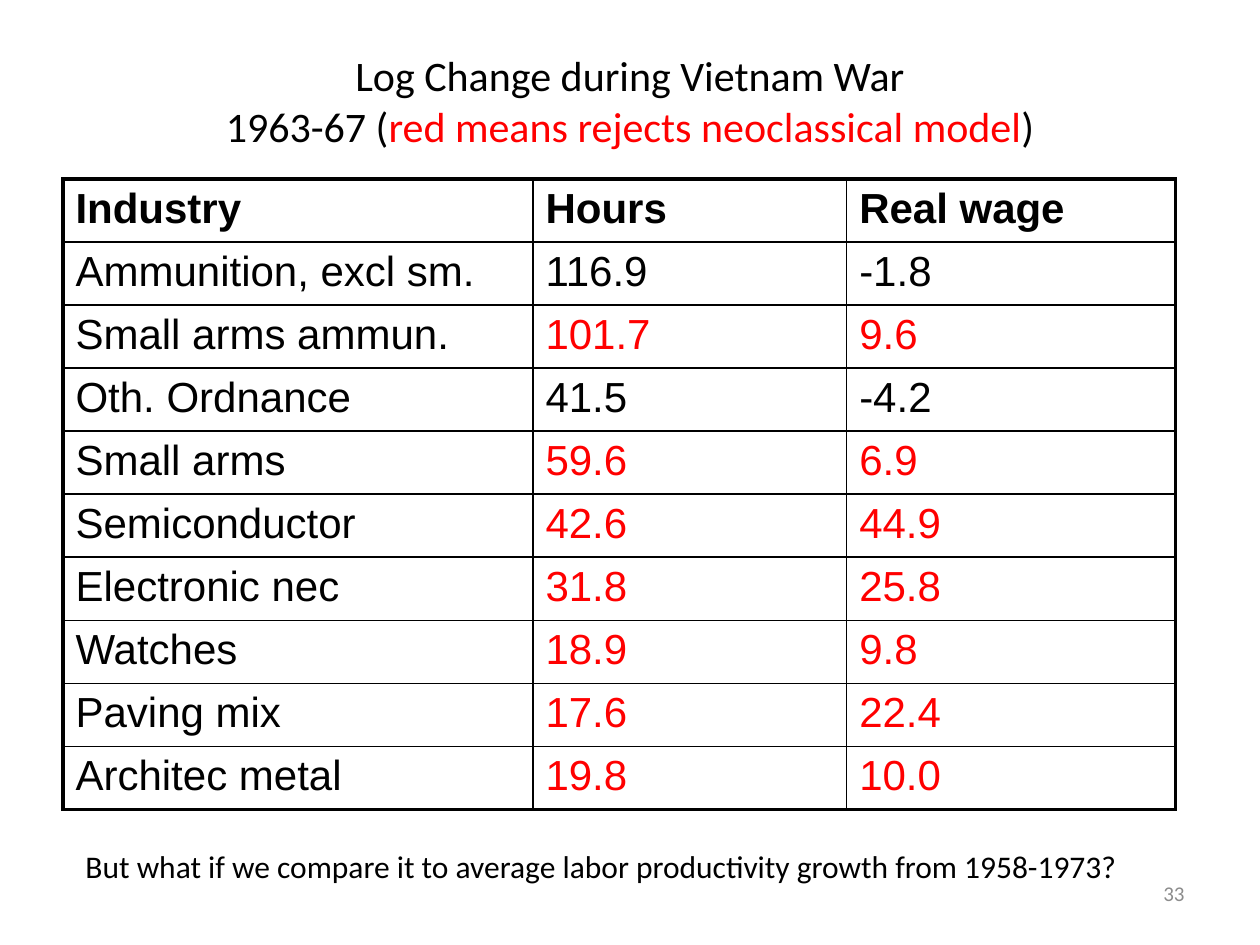
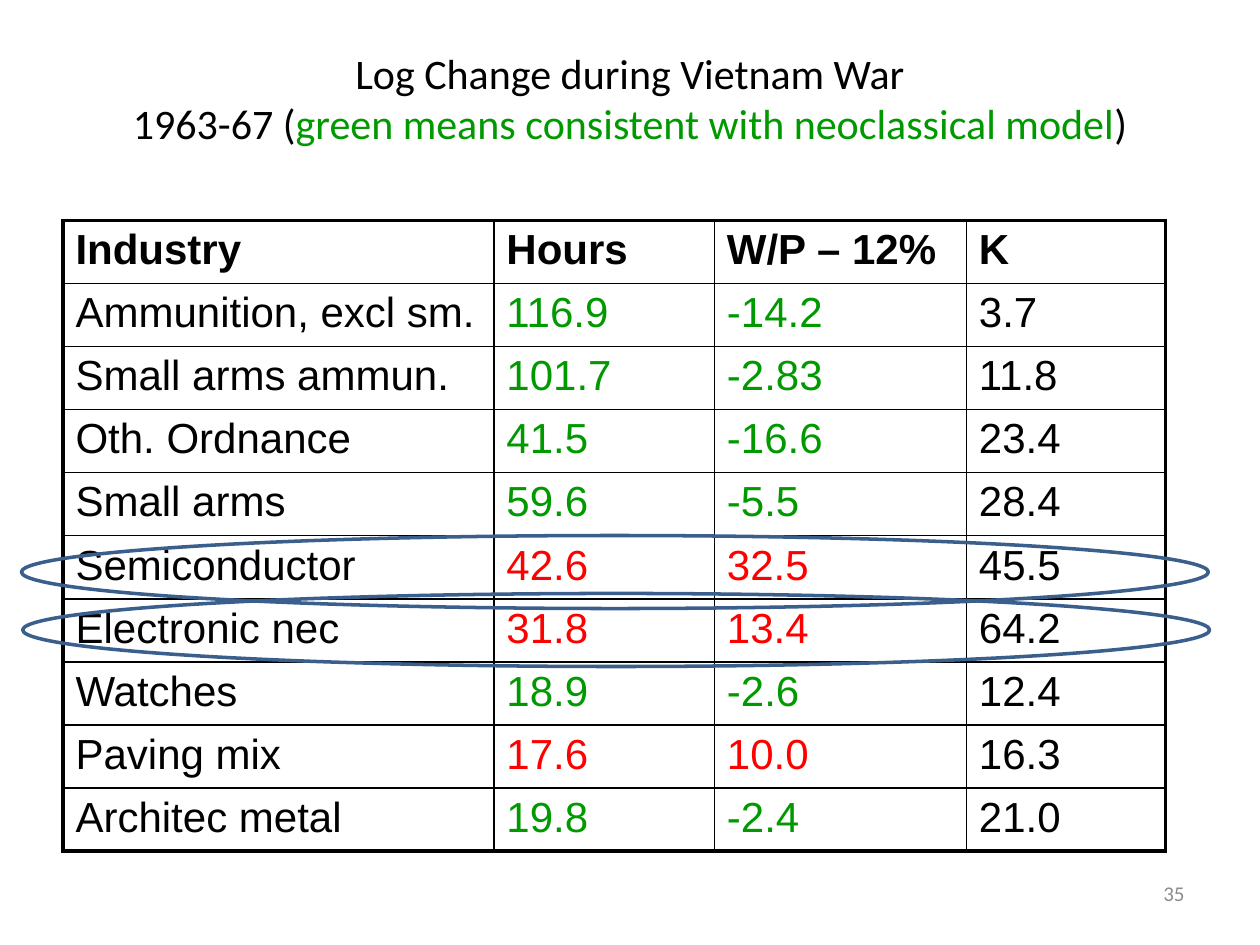
"""Build two slides on wartime changes in hours and real wages by industry."""
from lxml import etree
from pptx import Presentation
from pptx.dml.color import RGBColor
from pptx.enum import shapes, text
from pptx.oxml import ns
from pptx.util import Inches, Pt

COLOURS = {"ink": "000000", "reject": "FF0000", "agree": "009900",
           "number": "8C8C8C", "ring": "3A5F8C"}
TITLE = ("Log Change during Vietnam War", "1963-67 (")
ROW_HEIGHT, LAST_ROW_HEIGHT, TABLE_HEIGHT = 0.44, 0.5, 5
INNER_RULE, OUTER_RULE = 1, 2.25

SLIDES = [
    {
        "verdict": ("red means rejects neoclassical model", "reject"),
        "title_box": (0.5, 0.17, 9, 1.25),
        "table_top": 1.42,
        "widths": (3.73, 2.49, 2.61),
        "header": ("Industry", "Hours", "Real wage"),
        "falling_wage": "ink",
        "rows": [
            ("Ammunition, excl sm.", "116.9", "-1.8"),
            ("Small arms ammun.", "101.7", "9.6"),
            ("Oth. Ordnance", "41.5", "-4.2"),
            ("Small arms", "59.6", "6.9"),
            ("Semiconductor", "42.6", "44.9"),
            ("Electronic nec", "31.8", "25.8"),
            ("Watches", "18.9", "9.8"),
            ("Paving mix", "17.6", "22.4"),
            ("Architec metal", "19.8", "10.0"),
        ],
        "question": "But what if we compare it to average labor productivity "
                    "growth from 1958-1973?",
        "rings": [],
        "number": "33",
    },
    {
        "verdict": ("green means consistent with neoclassical model", "agree"),
        "title_box": (0.5, 0.3, 9, 0.95),
        "table_top": 1.75,
        "widths": (3.42, 1.75, 2, 1.58),
        "header": ("Industry", "Hours", "W/P – 12%", "K"),
        "falling_wage": "agree",
        "rows": [
            ("Ammunition, excl sm.", "116.9", "-14.2", "3.7"),
            ("Small arms ammun.", "101.7", "-2.83", "11.8"),
            ("Oth. Ordnance", "41.5", "-16.6", "23.4"),
            ("Small arms", "59.6", "-5.5", "28.4"),
            ("Semiconductor", "42.6", "32.5", "45.5"),
            ("Electronic nec", "31.8", "13.4", "64.2"),
            ("Watches", "18.9", "-2.6", "12.4"),
            ("Paving mix", "17.6", "10.0", "16.3"),
            ("Architec metal", "19.8", "-2.4", "21.0"),
        ],
        "question": None,
        "rings": [(0.17, 4.25, 9.42, 0.58), (0.18, 4.71, 9.42, 0.58)],
        "number": "35",
    },
]


def rgb(colour):
    return RGBColor.from_string(COLOURS[colour])


def style(run, size, colour="ink", font="Calibri", bold=False):
    run.font.size, run.font.name, run.font.bold = Pt(size), font, bold
    run.font.color.rgb = rgb(colour)


def add_text(slide, box, words, size, colour="ink", align=text.PP_ALIGN.LEFT,
             anchor=text.MSO_ANCHOR.TOP):
    frame = slide.shapes.add_textbox(*map(Inches, box)).text_frame
    frame.word_wrap, frame.vertical_anchor = True, anchor
    paragraph = frame.paragraphs[0]
    paragraph.text, paragraph.alignment = words, align
    for run in paragraph.runs:
        style(run, size, colour)
    return paragraph


def add_title(slide, box, verdict, colour):
    title = add_text(slide, box, "\v".join(TITLE), 24,
                     align=text.PP_ALIGN.CENTER, anchor=text.MSO_ANCHOR.MIDDLE)
    for words, shade in ((verdict, colour), (")", "ink")):
        run = title.add_run()
        run.text = words
        style(run, 24, shade)


def rule_cell(cell, outer_sides):
    properties = cell._tc.get_or_add_tcPr()
    for position, side in enumerate("LRTB"):
        width = OUTER_RULE if side in outer_sides else INNER_RULE
        line = etree.Element(ns.qn(f"a:ln{side}"), w=str(Pt(width)))
        fill = etree.SubElement(line, ns.qn("a:solidFill"))
        etree.SubElement(fill, ns.qn("a:srgbClr"), val=COLOURS["ink"])
        properties.insert(position, line)


def add_industry_table(slide, content):
    rows, widths = [content["header"], *content["rows"]], content["widths"]
    last_row, last_column = len(rows) - 1, len(widths) - 1
    frame = slide.shapes.add_table(
        len(rows), len(widths), Inches(0.5), Inches(content["table_top"]),
        Inches(sum(widths)), Inches(TABLE_HEIGHT))
    table = frame.table
    table.first_row = table.horz_banding = False
    for column, width in zip(table.columns, widths):
        column.width = Inches(width)
    for r, values in enumerate(rows):
        table.rows[r].height = Inches(LAST_ROW_HEIGHT if r == last_row else ROW_HEIGHT)
        for c, value in enumerate(values):
            colour = "ink"
            if r > 0 and c in (1, 2):
                colour = "reject" if float(values[2]) > 0 else content["falling_wage"]
            cell = table.cell(r, c)
            cell.fill.background()
            cell.text_frame.text = value
            style(cell.text_frame.paragraphs[0].runs[0], 24, colour, "Arial", r == 0)
            edges = {"L": c == 0, "R": c == last_column, "T": r == 0, "B": r == last_row}
            rule_cell(cell, [side for side, outer in edges.items() if outer])
    frame.height = Inches(TABLE_HEIGHT)


def add_ring(slide, box):
    ring = slide.shapes.add_shape(shapes.MSO_SHAPE.OVAL, *map(Inches, box))
    ring.shadow.inherit = False
    ring.fill.background()
    ring.line.color.rgb, ring.line.width = rgb("ring"), Pt(2)


def main():
    deck = Presentation()
    deck.slide_width, deck.slide_height = Inches(10), Inches(7.5)
    for content in SLIDES:
        slide = deck.slides.add_slide(deck.slide_layouts[6])
        add_title(slide, content["title_box"], *content["verdict"])
        add_industry_table(slide, content)
        add_text(slide, (7.17, 6.83, 2.33, 0.52), content["number"], 12, "number",
                 text.PP_ALIGN.RIGHT, text.MSO_ANCHOR.MIDDLE)
        if content["question"]:
            add_text(slide, (0.58, 6.67, 8.75, 0.4), content["question"], 18)
        for box in content["rings"]:
            add_ring(slide, box)
    deck.save("out.pptx")


if __name__ == "__main__":
    main()
